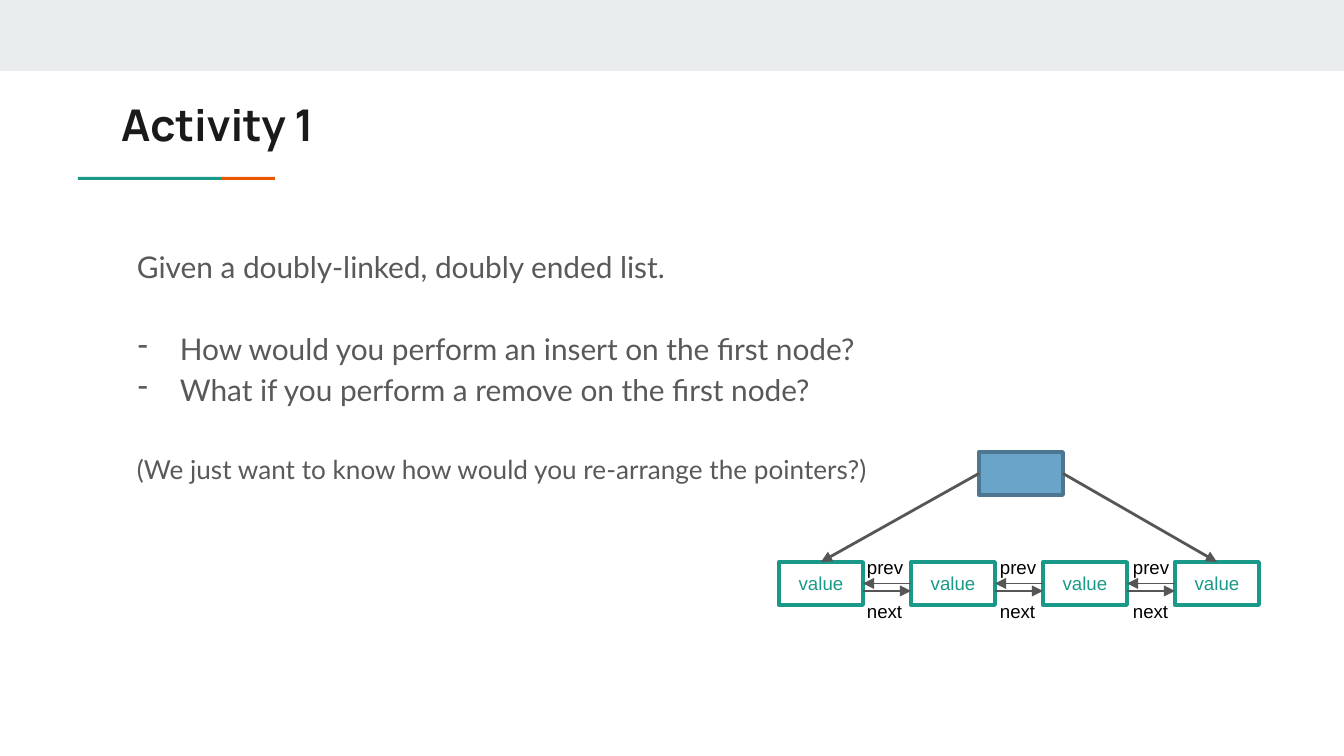
from dataclasses import dataclass
from typing import Optional

from lxml.etree import SubElement
from pptx import Presentation
from pptx.dml.color import RGBColor
from pptx.enum.shapes import MSO_CONNECTOR as Connector, MSO_SHAPE as Preset
from pptx.enum.text import MSO_ANCHOR as Anchor, PP_ALIGN as Align
from pptx.oxml.ns import qn
from pptx.util import Emu, Pt

BAND = RGBColor(0xE9, 0xED, 0xEE)
ORANGE = RGBColor(0xEB, 0x56, 0x00)
TEAL = RGBColor(0x1A, 0x99, 0x88)
INK = RGBColor(0x1A, 0x1A, 0x1A)
BODY_GRAY = RGBColor(0x59, 0x59, 0x59)
ARROW_GRAY = RGBColor(0x56, 0x56, 0x56)
HEAD_FILL = RGBColor(0x6A, 0xA4, 0xC8)
HEAD_LINE = RGBColor(0x4D, 0x77, 0x91)
WHITE = RGBColor(0xFF, 0xFF, 0xFF)
BLACK = RGBColor(0x00, 0x00, 0x00)

EMU_PER_PX = 914400 / 134.4
NODE_COUNT = 4
NODE_LEFT, NODE_TOP, NODE_PITCH = 779, 562, 132
NODE_WIDTH, NODE_HEIGHT = 84, 43
LABEL_PITCH = 133
TOP, LEFT, RIGHT = 0, 1, 3


@dataclass(frozen=True)
class Box:
    left: int
    top: int
    width: int
    height: int
    fill: RGBColor
    line: Optional[RGBColor] = None


@dataclass(frozen=True)
class BodyLine:
    text: str
    size: int = 16
    bullet: bool = False
    space_before: int = 0


@dataclass(frozen=True)
class LabelRow:
    text: str
    top: int


BANDS = [
    Box(0, 0, 1344, 71, BAND),
    Box(78, 177, 143, 3, TEAL),
    Box(221, 177, 54, 3, ORANGE),
]
BODY_LINES = [
    BodyLine("Given a doubly-linked, doubly ended list."),
    BodyLine("How would you perform an insert on the first node?", bullet=True, space_before=22),
    BodyLine("What if you perform a remove on the first node?", bullet=True),
    BodyLine("(We just want to know how would you re-arrange the pointers?)", 14, space_before=22),
]
HEAD = Box(979, 452, NODE_WIDTH, NODE_HEIGHT, HEAD_FILL, HEAD_LINE)
NODES = [
    Box(NODE_LEFT + i * NODE_PITCH, NODE_TOP, NODE_WIDTH, NODE_HEIGHT, WHITE, TEAL)
    for i in range(NODE_COUNT)
]
LABEL_ROWS = [LabelRow("next", 600), LabelRow("prev", 556)]


def px(value: int) -> Emu:
    return Emu(round(value * EMU_PER_PX))


def write_text(paragraph, text: str, *, size: float, font: str, color: RGBColor,
               bold: bool = False, align=Align.LEFT) -> None:
    paragraph.alignment = align
    run = paragraph.add_run()
    run.text = text
    run.font.size = Pt(size)
    run.font.name = font
    run.font.bold = bold
    run.font.color.rgb = color


def set_frame(frame, *, margin: int = 0, anchor=Anchor.TOP, wrap: bool = True) -> None:
    frame.margin_left = frame.margin_right = px(margin)
    frame.margin_top = frame.margin_bottom = px(margin)
    frame.vertical_anchor = anchor
    frame.word_wrap = wrap


def draw_box(slide, box: Box):
    shape = slide.shapes.add_shape(
        Preset.RECTANGLE, px(box.left), px(box.top), px(box.width), px(box.height))
    shape.shadow.inherit = False
    shape.fill.solid()
    shape.fill.fore_color.rgb = box.fill
    if box.line is None:
        shape.line.fill.background()
    else:
        shape.line.color.rgb = box.line
        shape.line.width = Pt(2)
    return shape


def draw_arrow(slide, start: tuple[int, int], end: tuple[int, int], width: float):
    connector = slide.shapes.add_connector(
        Connector.STRAIGHT, px(start[0]), px(start[1]), px(end[0]), px(end[1]))
    connector.line.color.rgb = ARROW_GRAY
    connector.line.width = Pt(width)
    SubElement(connector.line._get_or_add_ln(), qn("a:tailEnd"), type="triangle")
    SubElement(connector._element.spPr, qn("a:effectLst"))
    return connector


def join(slide, source, source_side: int, target, target_side: int, width: float) -> None:
    connector = draw_arrow(slide, (0, 0), (1, 1), width)
    connector.begin_connect(source, source_side)
    connector.end_connect(target, target_side)


def draw_title(slide) -> None:
    title = slide.shapes.title
    title.left, title.top, title.width, title.height = px(108), px(85), px(1130), px(79)
    set_frame(title.text_frame, margin=13, anchor=Anchor.MIDDLE)
    write_text(title.text_frame.paragraphs[0], "Activity 1",
               size=23.4, font="Manrope", color=INK, bold=True)


def draw_body(slide) -> None:
    frame = slide.shapes.add_textbox(px(108), px(230), px(1130), px(409)).text_frame
    set_frame(frame, margin=13)
    for index, line in enumerate(BODY_LINES):
        paragraph = frame.add_paragraph() if index else frame.paragraphs[0]
        write_text(paragraph, line.text, size=line.size, font="Lato", color=BODY_GRAY)
        paragraph.line_spacing = 1.15
        paragraph.space_before = Pt(line.space_before)
        properties = paragraph._p.get_or_add_pPr()
        properties.set("marL", str(px(59 if line.bullet else 16)))
        properties.set("indent", str(px(-42 if line.bullet else 0)))
        if line.bullet:
            SubElement(properties, qn("a:buChar"), char="-")


def draw_node(slide, box: Box):
    node = draw_box(slide, box)
    set_frame(node.text_frame, anchor=Anchor.MIDDLE)
    write_text(node.text_frame.paragraphs[0], "value",
               size=10, font="Arial", color=TEAL, align=Align.CENTER)
    return node


def draw_labels(slide, row: LabelRow) -> None:
    for index in range(NODE_COUNT - 1):
        left = NODE_LEFT + NODE_WIDTH + 4 + index * LABEL_PITCH
        label = slide.shapes.add_textbox(px(left), px(row.top), px(40), px(22))
        set_frame(label.text_frame, wrap=False)
        write_text(label.text_frame.paragraphs[0], row.text,
                   size=10, font="Arial", color=BLACK)


def draw_list(slide) -> None:
    head = draw_box(slide, HEAD)
    nodes = [draw_node(slide, box) for box in NODES]
    join(slide, head, LEFT, nodes[0], TOP, 1.5)
    join(slide, head, RIGHT, nodes[-1], TOP, 1.5)
    for box, following in zip(NODES, NODES[1:]):
        draw_arrow(slide, (box.left + box.width, 591), (following.left, 591), 0.75)
    for node, following in zip(nodes, nodes[1:]):
        join(slide, following, LEFT, node, RIGHT, 0.75)
    for row in LABEL_ROWS:
        draw_labels(slide, row)


def main() -> None:
    presentation = Presentation()
    presentation.slide_width, presentation.slide_height = px(1344), px(756)
    slide = presentation.slides.add_slide(presentation.slide_layouts[5])
    for band in BANDS:
        draw_box(slide, band)
    draw_title(slide)
    draw_body(slide)
    draw_list(slide)
    presentation.save("out.pptx")


if __name__ == "__main__":
    main()
